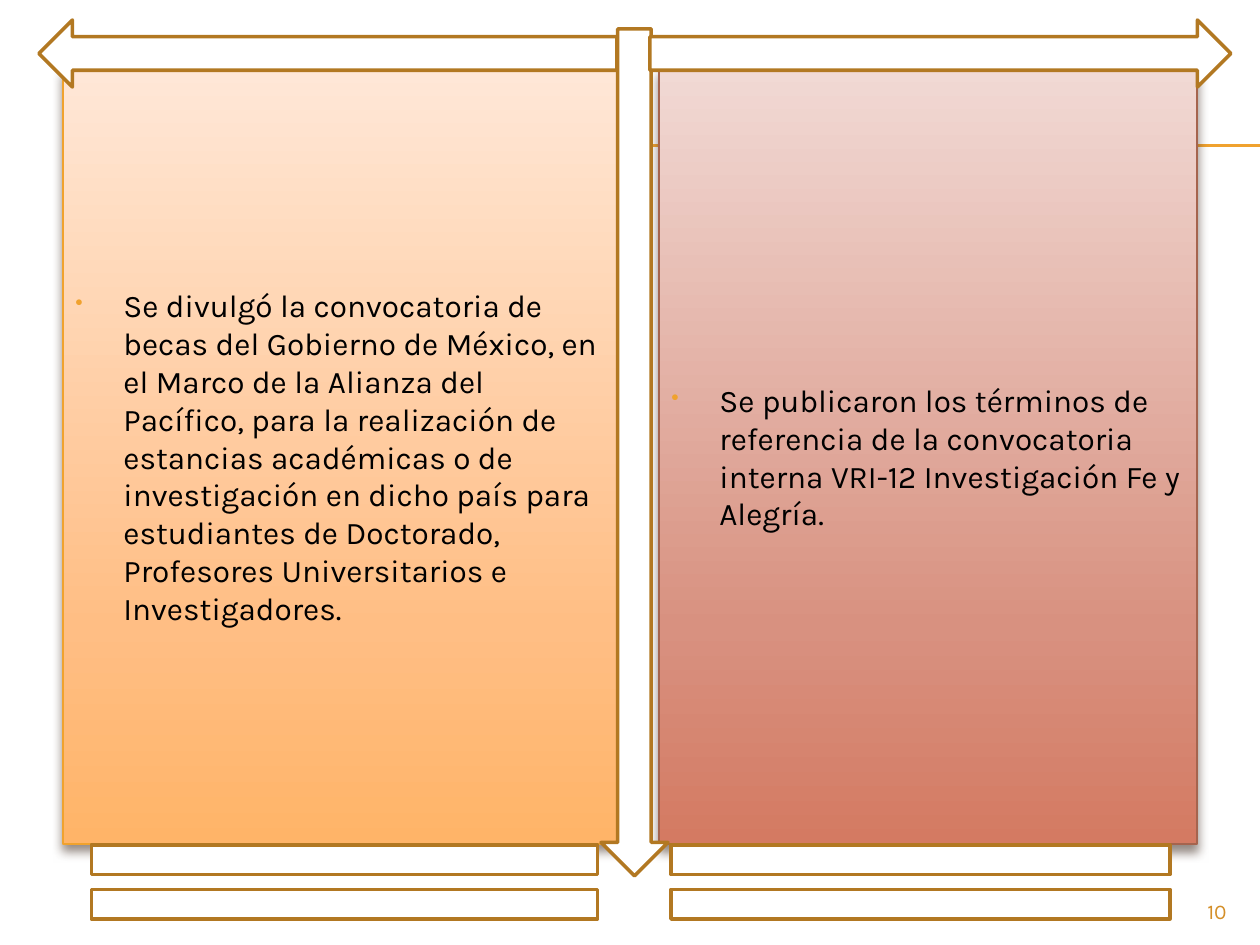
from copy import deepcopy

from pptx import Presentation
from pptx.dml.color import RGBColor
from pptx.enum.shapes import MSO_CONNECTOR, MSO_SHAPE
from pptx.enum.text import MSO_ANCHOR, PP_ALIGN
from pptx.oxml import parse_xml
from pptx.oxml.ns import nsdecls, qn
from pptx.util import Pt

RECT = MSO_SHAPE.RECTANGLE
DOWN = MSO_SHAPE.DOWN_ARROW
RIGHT = MSO_SHAPE.RIGHT_ARROW
LEFT = MSO_SHAPE.LEFT_ARROW
EQUAL = MSO_SHAPE.MATH_EQUAL
STRAIGHT = MSO_CONNECTOR.STRAIGHT
MIDDLE = MSO_ANCHOR.MIDDLE
TOP = MSO_ANCHOR.TOP
ALIGN_L = PP_ALIGN.LEFT
ALIGN_R = PP_ALIGN.RIGHT

WHITE = RGBColor(0xFF, 0xFF, 0xFF)
BLACK = RGBColor(0x00, 0x00, 0x00)
AMBER = RGBColor(0xF0, 0xA2, 0x2E)
BRICK = RGBColor(0xA5, 0x64, 0x4E)
BROWN = RGBColor(0xB2, 0x78, 0x22)
GOLD = RGBColor(0xD4, 0x8F, 0x29)
SHADE = RGBColor(0x4E, 0x3B, 0x30)
PEACH = (RGBColor(0xFF, 0xE7, 0xD7), RGBColor(0xFF, 0xBE, 0x84),
         RGBColor(0xFF, 0xB4, 0x68))
ROSE = (RGBColor(0xF1, 0xD9, 0xD4), RGBColor(0xD8, 0x91, 0x80),
        RGBColor(0xD4, 0x7A, 0x62))
STOPS = (0, 0.72, 1)

FONT = "Karla"
INDENT = 48

GRANTS = ("Se divulgó la convocatoria de becas del Gobierno de México, en el "
          "Marco de la Alianza del Pacífico, para la realización de estancias "
          "académicas o de investigación en dicho país para estudiantes de "
          "Doctorado, Profesores Universitarios e Investigadores.")
TERMS = ("Se publicaron los términos de referencia de la convocatoria interna "
         "VRI-12 Investigación Fe y Alegría.")


def px(n):
    return round(n * 914400 / 126)


def add_rule(slide, y):
    rule = slide.shapes.add_connector(STRAIGHT, px(71), px(y), px(1260), px(y))
    rule.line.color.rgb = AMBER
    rule.line.width = Pt(0.75)
    rule._element.spPr.append(parse_xml(f"<a:effectLst {nsdecls('a')}/>"))


def add_form(slide, kind, box, line=BROWN, width=2):
    form = slide.shapes.add_shape(kind, *map(px, box))
    form.shadow.inherit = False
    form.fill.solid()
    form.fill.fore_color.rgb = WHITE
    form.line.color.rgb = line
    form.line.width = Pt(width)
    return form


def set_text(shape, text, size=18, color=BLACK, align=ALIGN_L, anchor=TOP):
    frame = shape.text_frame
    frame.word_wrap = True
    frame.vertical_anchor = anchor
    para = frame.paragraphs[0]
    para.alignment = align
    run = para.add_run()
    run.text = text
    run.font.name = FONT
    run.font.size = Pt(size)
    run.font.color.rgb = color
    return para


def add_bullet(para):
    props = para._p.get_or_add_pPr()
    props.set("marL", str(px(INDENT)))
    props.set("indent", str(-px(INDENT)))
    for xml in (f'<a:buClr {nsdecls("a")}><a:srgbClr val="{AMBER}"/></a:buClr>',
                f'<a:buSzPct {nsdecls("a")} val="70000"/>',
                f'<a:buChar {nsdecls("a")} char="•"/>'):
        props.append(parse_xml(xml))


def set_blend(shape, colors):
    """Fill from top to bottom with three colours."""
    fill = shape.fill
    fill.gradient()
    fill.gradient_angle = 270
    stops = shape._element.spPr.find(".//" + qn("a:gsLst"))
    stops.append(deepcopy(stops[-1]))
    for stop, place, color in zip(fill.gradient_stops, STOPS, colors):
        stop.position = place
        stop.color.rgb = color


def add_shadow(shape):
    shape._element.spPr.find(qn("a:effectLst")).append(parse_xml(
        f'<a:outerShdw {nsdecls("a")} blurRad="{Pt(6)}" dist="{Pt(4)}" '
        f'dir="5400000" rotWithShape="0"><a:srgbClr val="{SHADE}">'
        '<a:alpha val="60000"/></a:srgbClr></a:outerShdw>'))


def add_panel(slide, left, width, text, colors, line):
    panel = add_form(slide, RECT, (left, 69, width, 775), line, 0.79)
    set_blend(panel, colors)
    add_shadow(panel)
    add_bullet(set_text(panel, text, anchor=MIDDLE))


def main():
    deck = Presentation()
    deck.slide_width, deck.slide_height = px(1260), px(945)
    slide = deck.slides.add_slide(deck.slide_layouts[6])

    for y in (145, 146):
        add_rule(slide, y)
    add_panel(slide, 63, 557, GRANTS, PEACH, AMBER)
    add_panel(slide, 659, 538, TERMS, ROSE, BRICK)
    for kind, box in ((DOWN, (601, 29, 67, 847)),
                      (RIGHT, (650, 20, 581, 67)),
                      (LEFT, (39, 20, 578, 67)),
                      (EQUAL, (0, 819, 689, 126)),
                      (EQUAL, (581, 819, 679, 126))):
        add_form(slide, kind, box)
    number = slide.shapes.add_textbox(*map(px, (1134, 892, 105, 34)))
    set_text(number, "10", size=12, color=GOLD, align=ALIGN_R)

    deck.save("out.pptx")


if __name__ == "__main__":
    main()
